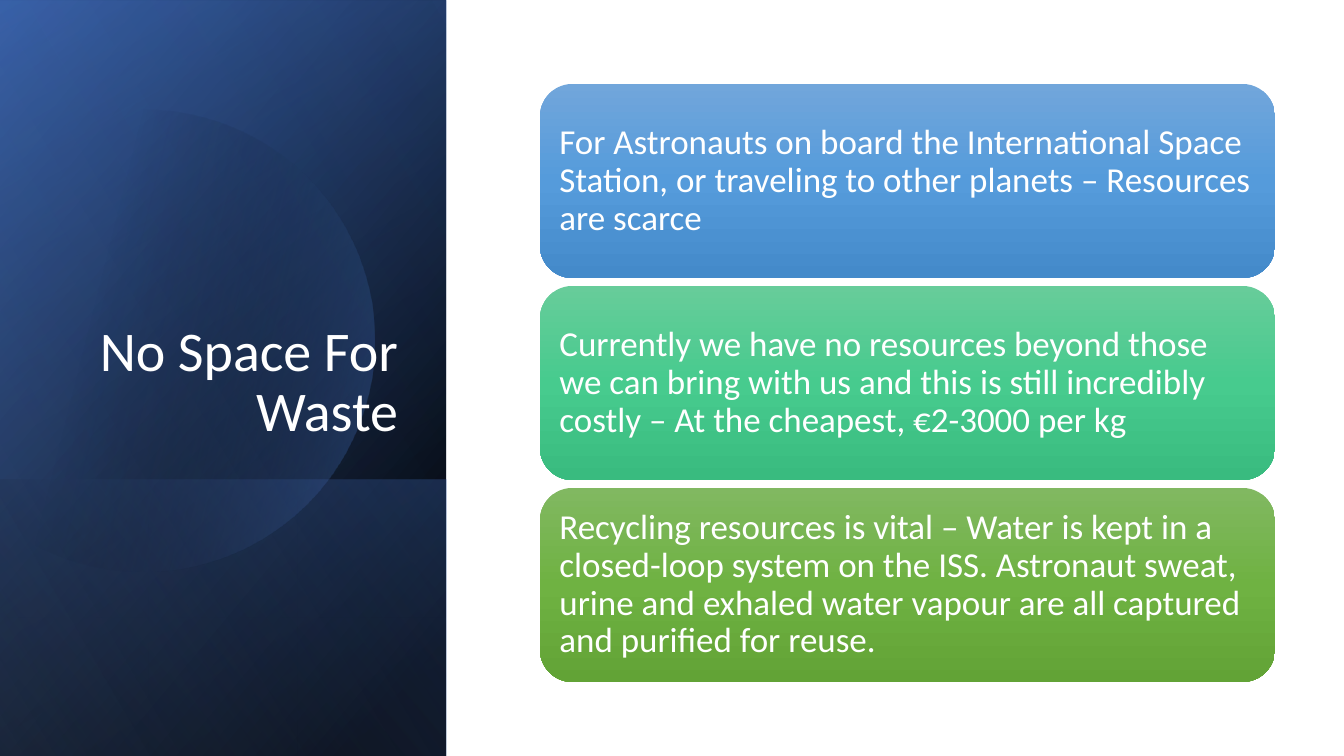
import math

from pptx import Presentation
from pptx.dml.color import RGBColor
from pptx.enum.shapes import MSO_SHAPE
from pptx.enum.text import MSO_ANCHOR, MSO_AUTO_SIZE, PP_ALIGN
from pptx.oxml import parse_xml
from pptx.oxml.ns import nsdecls, qn
from pptx.util import Pt

RECTANGLE = MSO_SHAPE.RECTANGLE
ROUNDED = MSO_SHAPE.ROUNDED_RECTANGLE
MIDDLE = MSO_ANCHOR.MIDDLE
BOTTOM = MSO_ANCHOR.BOTTOM
NO_FIT = MSO_AUTO_SIZE.NONE
LEFT = PP_ALIGN.LEFT
RIGHT = PP_ALIGN.RIGHT

FONT = "Calibri"
WHITE = "FFFFFF"
TITLE = "No Space For Waste"
CARDS = [
    ("For Astronauts on board the International Space Station, or traveling to "
     "other planets – Resources are scarce", ("71A6DB", "559BDB", "448ACA")),
    ("Currently we have no resources beyond those we can bring with us and this is "
     "still incredibly costly – At the cheapest, €2-3000 per kg",
     ("67CC9A", "47CB8E", "39BB7F")),
    ("Recycling resources is vital – Water is kept in a closed-loop system on the "
     "ISS. Astronaut sweat, urine and exhaled water vapour are all captured and "
     "purified for reuse.", ("81B861", "6FB242", "62A336")),
]

PANEL_WIDTH = 446
BACK_PANELS = [
    (0, 756, 50, [(8, "000000", 100), (100, "2F5597", 100)]),
    (1, 756, 30, [(0, "000000", 0), (99, "4472C4", 46)]),
    (480, 276, 130, [(2, "4472C4", 29), (100, "000000", 30)]),
]
FRONT_PANEL = (0, 756, 120, [(0, "000000", 0), (99, "8FAADC", 11)])
DISC_CENTRE_X, DISC_CENTRE_Y, DISC_RADIUS = 143, 341, 231
DISC_STOPS = [(29, "000000", 0), (100, "4472C4", 43)]
CARD_LEFT, CARD_TOP, CARD_WIDTH, CARD_HEIGHT, CARD_STEP = 540, 84, 735, 194, 202
EMU_PER_PX = 914400 / 100.8


def px(length):
    return round(length * EMU_PER_PX)


def color(value):
    return RGBColor.from_string(value)


def paint(shape, stops, angle):
    stop_xml = "".join(
        f'<a:gs pos="{position * 1000}"><a:srgbClr val="{color(value)}">'
        f'<a:alpha val="{opacity * 1000}"/></a:srgbClr></a:gs>'
        for position, value, opacity in stops)
    gradient = parse_xml(
        f'<a:gradFill {nsdecls("a")} rotWithShape="1"><a:gsLst>{stop_xml}</a:gsLst>'
        f'<a:lin ang="{angle * 60000}" scaled="0"/></a:gradFill>')
    shape.fill.background()
    properties = shape._element.spPr
    properties.replace(properties.find(qn("a:noFill")), gradient)
    shape.line.fill.background()
    shape.shadow.inherit = False


def add_panel(shapes, top, height, angle, stops):
    left = (PANEL_WIDTH - height) / 2
    panel = shapes.add_shape(RECTANGLE, px(left), px(top - left),
                             px(height), px(PANEL_WIDTH))
    panel.rotation = 90
    panel._element.spPr.xfrm.set("flipH", "1")
    paint(panel, stops, angle)


def add_disc(shapes):
    reach = math.acos(-DISC_CENTRE_X / DISC_RADIUS)
    steps = 120
    angles = [reach * (2 * step / steps - 1) for step in range(steps + 1)]
    points = [(px(DISC_CENTRE_X + DISC_RADIUS * math.cos(angle)),
               px(DISC_CENTRE_Y + DISC_RADIUS * math.sin(angle)))
              for angle in angles]
    builder = shapes.build_freeform(*points[0])
    builder.add_line_segments(points[1:], close=True)
    paint(builder.convert_to_shape(), DISC_STOPS, 14)


def write(shape, text, size, alignment, anchor):
    frame = shape.text_frame
    frame.word_wrap = True
    frame.auto_size = NO_FIT
    frame.vertical_anchor = anchor
    frame.margin_left = frame.margin_right = px(10)
    para = frame.paragraphs[0]
    para.alignment = alignment
    para.line_spacing = 0.9
    span = para.add_run()
    span.text = text
    span.font.name = FONT
    span.font.size = Pt(size)
    span.font.color.rgb = color(WHITE)


def add_card(shapes, index, text, shades):
    card = shapes.add_shape(ROUNDED, px(CARD_LEFT), px(CARD_TOP + index * CARD_STEP),
                            px(CARD_WIDTH), px(CARD_HEIGHT))
    stops = [(position, shade, 100) for position, shade in zip((0, 50, 100), shades)]
    paint(card, stops, 90)
    card.text_frame.margin_top = card.text_frame.margin_bottom = px(10)
    write(card, text, 25, LEFT, MIDDLE)


def main():
    deck = Presentation()
    deck.slide_width, deck.slide_height = px(1344), px(756)
    page = deck.slides.add_slide(deck.slide_layouts[5])
    shapes = page.shapes
    for panel in BACK_PANELS:
        add_panel(shapes, *panel)
    add_disc(shapes)
    add_panel(shapes, *FRONT_PANEL)

    title = shapes.title
    shapes._spTree.append(title._element)
    title.left, title.top, title.width, title.height = map(px, (64, 185, 344, 264))
    write(title, TITLE, 40, RIGHT, BOTTOM)

    for index, (text, shades) in enumerate(CARDS):
        add_card(shapes, index, text, shades)
    deck.save("out.pptx")


if __name__ == "__main__":
    main()
